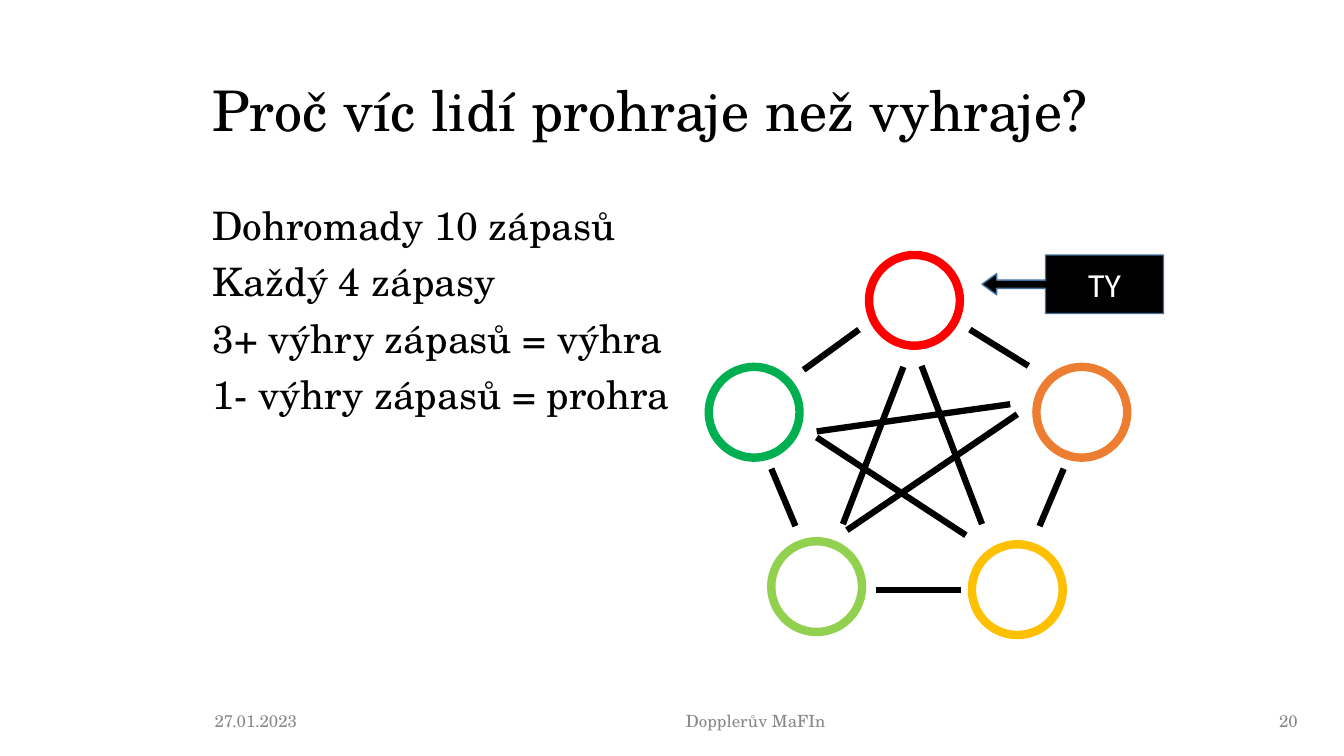
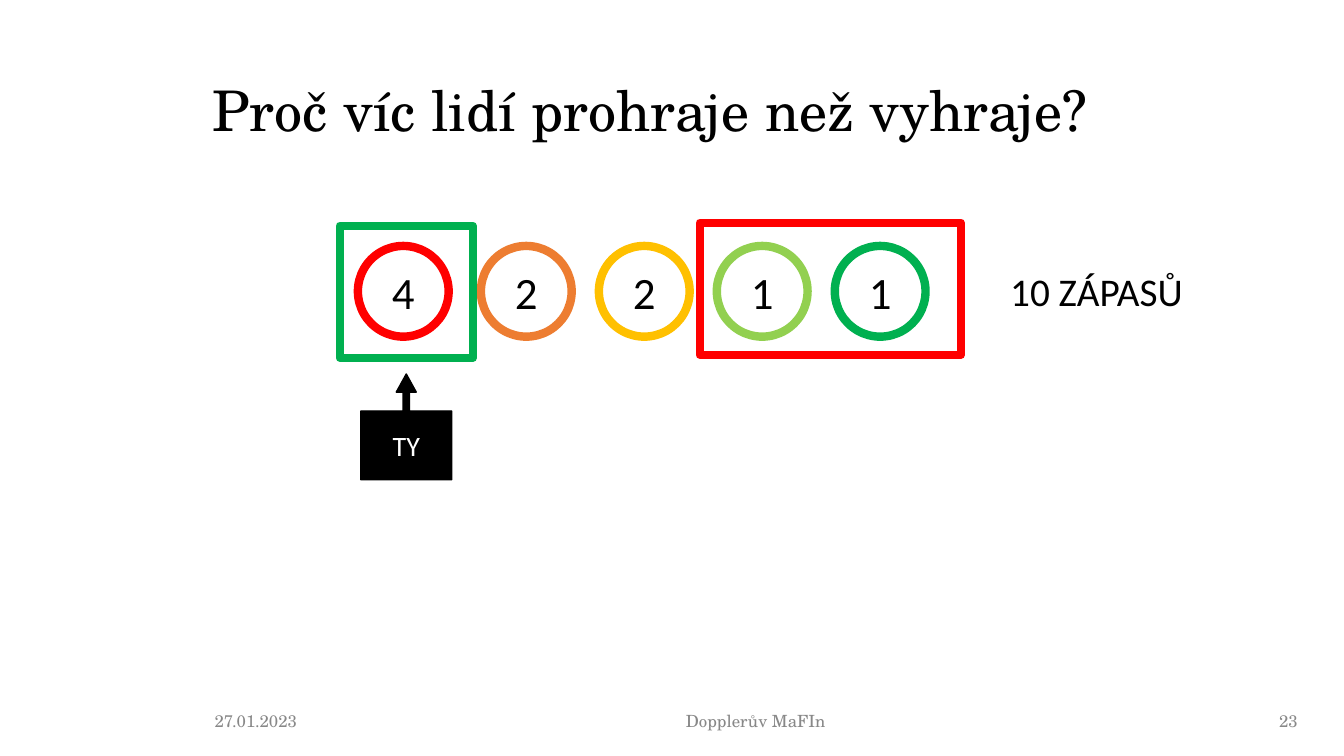
from dataclasses import dataclass
from pptx import Presentation
from pptx.dml.color import RGBColor
from pptx.enum.shapes import MSO_CONNECTOR, MSO_SHAPE
from pptx.enum.text import MSO_ANCHOR, PP_ALIGN
from pptx.oxml.ns import qn
from pptx.util import Inches, Pt
from lxml.etree import SubElement


@dataclass(frozen=True)
class Theme:
    serif: str = "TeX Gyre Schola"
    sans: str = "Calibri"
    black: str = "000000"
    white: str = "FFFFFF"
    grey: str = "888888"
    red: str = "FF0000"
    orange: str = "ED7D31"
    yellow: str = "FFC000"
    lime: str = "92D050"
    green: str = "00B050"
    callout_edge: str = "42719B"
    title_size: int = 40
    score_size: int = 32
    body_size: int = 28
    callout_size: int = 24
    small_callout_size: int = 20
    footer_size: int = 12
    ring_width: float = 6
    match_width: float = 4.5


theme = Theme()
PLAYER_COLOURS = [theme.red, theme.orange, theme.yellow, theme.lime, theme.green]
PLAYER_SIZE = 0.9


def write(shape, text, size, font=theme.sans, colour=theme.black,
          align=PP_ALIGN.CENTER, anchor=MSO_ANCHOR.MIDDLE, line_spacing=1.0):
    """Fill a shape with text, one paragraph per line, in a single style."""
    frame = shape.text_frame
    frame.text = text
    frame.word_wrap = True
    frame.vertical_anchor = anchor
    for index, para in enumerate(frame.paragraphs):
        para.alignment = align
        para.line_spacing = line_spacing
        if index:
            para.space_before = Pt(10)
        for span in para.runs:
            span.font.name = font
            span.font.size = Pt(size)
            span.font.color.rgb = RGBColor.from_string(colour)


def draw(page, kind, left, top, width, height, line, line_width, fill=None):
    shape = page.shapes.add_shape(kind, Inches(left), Inches(top), Inches(width), Inches(height))
    shape.shadow.inherit = False
    if fill:
        shape.fill.solid()
        shape.fill.fore_color.rgb = RGBColor.from_string(fill)
    else:
        shape.fill.background()
    shape.line.color.rgb = RGBColor.from_string(line)
    shape.line.width = Pt(line_width)
    return shape


deck = Presentation()
deck.slide_width, deck.slide_height = Inches(13.33), Inches(7.5)

# Title and footer on every page
pages = []
for number in ("20", "23"):
    page = deck.slides.add_slide(deck.slide_layouts[6])
    pages.append(page)
    title = page.shapes.add_textbox(Inches(2.01), Inches(0.4), Inches(10.96), Inches(1.46))
    write(title, "Proč víc lidí prohraje než vyhraje?", theme.title_size, theme.serif,
          align=PP_ALIGN.LEFT, line_spacing=0.9)
    for left, width, text, align in [
        (2.03, 2.66, "27.01.2023", PP_ALIGN.LEFT),
        (5.69, 3.61, "Dopplerův MaFIn", PP_ALIGN.CENTER),
        (9.97, 3, number, PP_ALIGN.RIGHT),
    ]:
        footer = page.shapes.add_textbox(Inches(left), Inches(6.95), Inches(width), Inches(0.4))
        write(footer, text, theme.footer_size, theme.serif, theme.grey, align)
tournament, results = pages

# Tournament: every player meets every other
body = tournament.shapes.add_textbox(Inches(2.01), Inches(2), Inches(10.96), Inches(4.81))
write(body, "Dohromady 10 zápasů\nKaždý 4 zápasy\n3+ výhry zápasů = výhra\n1- výhry zápasů = prohra",
      theme.body_size, theme.serif, align=PP_ALIGN.LEFT, anchor=MSO_ANCHOR.TOP, line_spacing=0.9)

player_corners = [(8.62, 2.53), (10.28, 3.64), (9.64, 5.4), (7.65, 5.37), (7.03, 3.64)]
for (left, top), colour in zip(player_corners, PLAYER_COLOURS):
    draw(tournament, MSO_SHAPE.OVAL, left, top, PLAYER_SIZE, PLAYER_SIZE,
         colour, theme.ring_width, theme.white)

matches = [
    (8.96, 3.64, 8.36, 5.2), (10.02, 4.01, 8.1, 4.28), (9.58, 5.31, 8.1, 4.34),
    (10.09, 4.11, 8.4, 5.26), (9.14, 3.63, 9.74, 5.2), (8.52, 3.27, 7.97, 3.67),
    (7.89, 5.22, 7.65, 4.65), (10.31, 5.22, 10.55, 4.65), (8.69, 5.85, 9.53, 5.85),
    (9.62, 3.27, 10.2, 3.63),
]
for ends in matches:
    match = tournament.shapes.add_connector(MSO_CONNECTOR.STRAIGHT, *map(Inches, ends))
    match.line.color.rgb = RGBColor.from_string(theme.black)
    match.line.width = Pt(theme.match_width)
    SubElement(match._element.spPr, qn("a:effectLst"))

# Results: wins per player
player_lefts = [3.55, 4.77, 5.94, 7.11, 8.28]
for left, wins, colour in zip(player_lefts, "42211", PLAYER_COLOURS):
    player = draw(results, MSO_SHAPE.OVAL, left, 2.44, PLAYER_SIZE, PLAYER_SIZE,
                  colour, theme.ring_width, theme.white)
    write(player, wins, theme.score_size)

total = results.shapes.add_textbox(Inches(9.76), Inches(2.36), Inches(2.23), Inches(1.05))
write(total, "10 ZÁPASŮ", theme.body_size)

draw(results, MSO_SHAPE.RECTANGLE, 3.37, 2.24, 1.32, 1.31, theme.green, theme.ring_width)
draw(results, MSO_SHAPE.RECTANGLE, 6.94, 2.21, 2.59, 1.31, theme.red, theme.ring_width)

# "You" callouts
for page, kind, place, edge, size, proportions in [
    (tournament, MSO_SHAPE.LEFT_ARROW_CALLOUT, (9.74, 2.53, 1.8, 0.58),
     theme.callout_edge, theme.callout_size, (0.14, 0.18, 0.25, 0.65)),
    (results, MSO_SHAPE.UP_ARROW_CALLOUT, (3.58, 3.71, 0.9, 1.05),
     theme.black, theme.small_callout_size, (0.07, 0.11, 0.2, 0.65)),
]:
    callout = draw(page, kind, *place, edge, 1, theme.black)
    for index, proportion in enumerate(proportions):
        callout.adjustments[index] = proportion
    write(callout, "TY", size, colour=theme.white)

deck.save("out.pptx")
